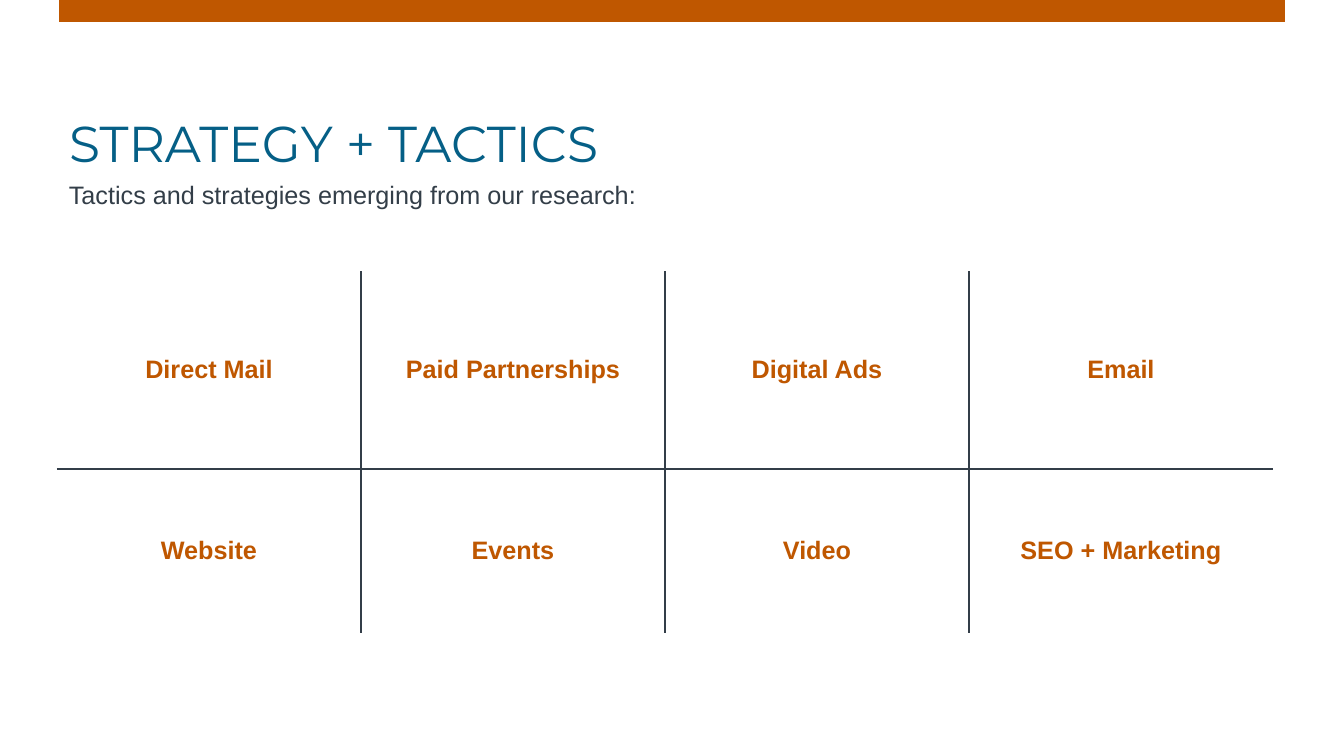
from dataclasses import dataclass

from lxml import etree
from pptx import Presentation, util as u
from pptx.dml.color import RGBColor
from pptx.enum import shapes, text
from pptx.oxml.ns import qn
from pptx.slide import Slide
from pptx.table import _Cell
from pptx.text.text import TextFrame

ORANGE = RGBColor(0xBF, 0x57, 0x00)
BLUE = RGBColor(0x05, 0x5F, 0x86)
SLATE = RGBColor(0x33, 0x3E, 0x48)

PX_PER_INCH = 100.8
TACTICS = [
    ["Direct Mail", "Paid Partnerships", "Digital Ads", "Email"],
    ["Website", "Events", "Video", "SEO + Marketing"],
]
COLUMN_WIDTH = 304
ROW_HEIGHTS = [198, 164]


def px(length: int) -> u.Emu:
    return u.Emu(round(length * u.Inches(1) / PX_PER_INCH))


@dataclass(frozen=True)
class Box:
    left: int
    top: int
    width: int
    height: int

    def emu(self) -> tuple[u.Emu, ...]:
        return px(self.left), px(self.top), px(self.width), px(self.height)


@dataclass(frozen=True)
class TextStyle:
    font: str
    size: int
    color: RGBColor
    bold: bool = False
    align: text.PP_ALIGN = text.PP_ALIGN.LEFT


BAR = Box(59, 0, 1226, 22)
TITLE = Box(59, 114, 1226, 59)
INTRO = Box(59, 174, 591, 40)
GRID = Box(57, 271, COLUMN_WIDTH * len(TACTICS[0]), sum(ROW_HEIGHTS))

TITLE_STYLE = TextStyle("Montserrat", 36, BLUE)
INTRO_STYLE = TextStyle("Arial", 18, SLATE)
TACTIC_STYLE = TextStyle("Arial", 18, ORANGE, True, text.PP_ALIGN.CENTER)


def write(frame: TextFrame, wording: str, style: TextStyle) -> None:
    frame.text = wording
    paragraph = frame.paragraphs[0]
    paragraph.alignment = style.align
    paragraph.font.name = style.font
    paragraph.font.size = u.Pt(style.size)
    paragraph.font.bold = style.bold
    paragraph.font.color.rgb = style.color


def add_bar(slide: Slide) -> None:
    bar = slide.shapes.add_shape(shapes.MSO_SHAPE.RECTANGLE, *BAR.emu())
    bar.shadow.inherit = False
    bar.fill.solid()
    bar.fill.fore_color.rgb = ORANGE
    bar.line.fill.background()


def add_heading(slide: Slide) -> None:
    title = slide.shapes.title
    title.left, title.top, title.width, title.height = TITLE.emu()
    frame = title.text_frame
    write(frame, "STRATEGY + TACTICS", TITLE_STYLE)
    frame.auto_size = text.MSO_AUTO_SIZE.NONE
    frame.vertical_anchor = text.MSO_ANCHOR.TOP
    frame.paragraphs[0].line_spacing = 0.9

    intro = slide.shapes.add_textbox(*INTRO.emu()).text_frame
    intro.word_wrap = True
    write(intro, "Tactics and strategies emerging from our research:", INTRO_STYLE)


def draw_borders(cell: _Cell, sides: dict[str, bool]) -> None:
    """Rule the sides marked True and clear the others, in schema order."""
    properties = cell._tc.get_or_add_tcPr()
    for side, ruled in sides.items():
        line = etree.SubElement(properties, qn(f"a:ln{side}"), w=str(u.Pt(1)))
        if ruled:
            fill = etree.SubElement(line, qn("a:solidFill"))
            etree.SubElement(fill, qn("a:srgbClr"), val=str(SLATE))
        else:
            etree.SubElement(line, qn("a:noFill"))


def add_tactics(slide: Slide) -> None:
    row_count, column_count = len(TACTICS), len(TACTICS[0])
    table = slide.shapes.add_table(row_count, column_count, *GRID.emu()).table
    table.first_row = table.horz_banding = False
    for column in table.columns:
        column.width = px(COLUMN_WIDTH)
    for r, (names, height) in enumerate(zip(TACTICS, ROW_HEIGHTS)):
        table.rows[r].height = px(height)
        for c, name in enumerate(names):
            cell = table.cell(r, c)
            write(cell.text_frame, name, TACTIC_STYLE)
            cell.vertical_anchor = text.MSO_ANCHOR.MIDDLE
            draw_borders(cell, {
                "L": c > 0,
                "R": c < column_count - 1,
                "T": r > 0,
                "B": r < row_count - 1,
            })
            cell.fill.background()


def main() -> None:
    presentation = Presentation()
    presentation.slide_width, presentation.slide_height = px(1344), px(756)
    slide = presentation.slides.add_slide(
        presentation.slide_layouts.get_by_name("Title Only"))
    add_bar(slide)
    add_heading(slide)
    add_tactics(slide)
    presentation.save("out.pptx")


if __name__ == "__main__":
    main()
